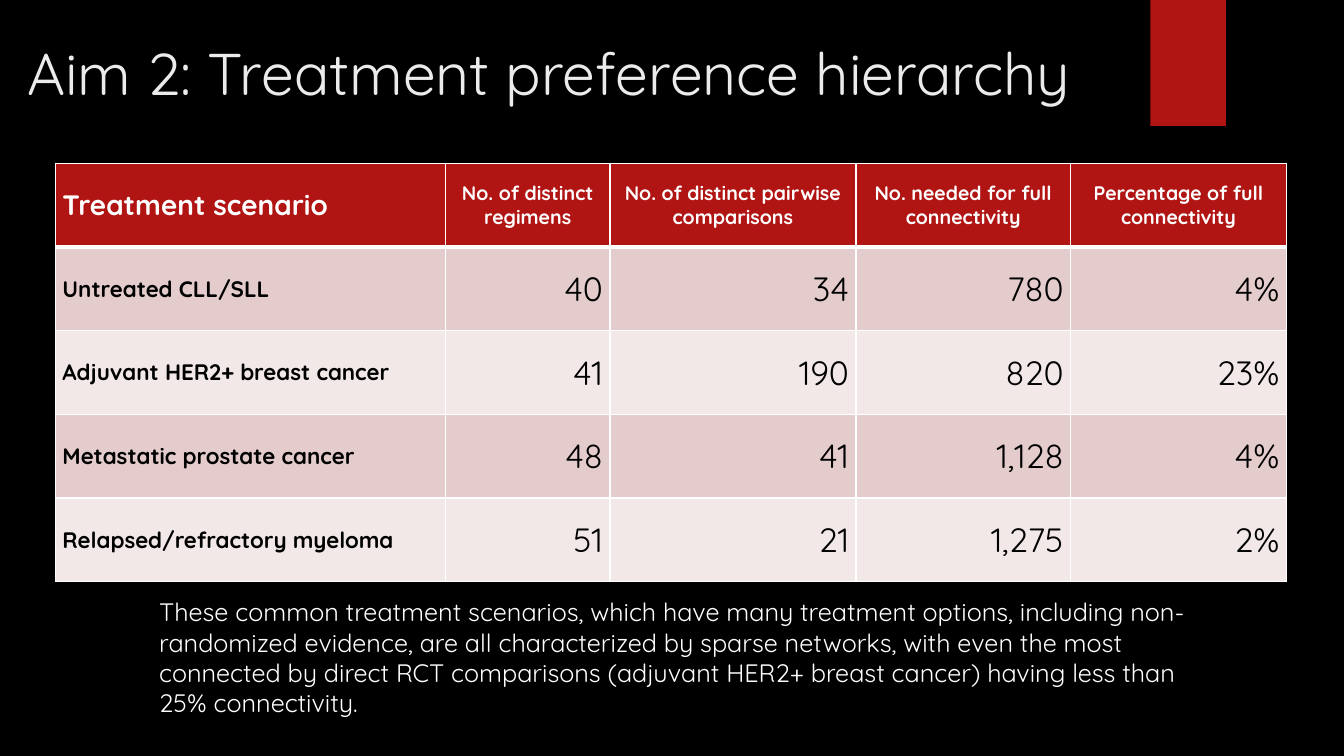
from pptx import Presentation
from pptx.dml.color import RGBColor
from pptx.enum.shapes import MSO_SHAPE
from pptx.enum.text import MSO_ANCHOR as ANCHOR, PP_ALIGN as ALIGN
from pptx.oxml import parse_xml
from pptx.oxml.ns import nsdecls
from pptx.util import Inches, Pt

FONT = "Quicksand"
RED, WHITE, BLACK = "B01513", "FFFFFF", "000000"
BANDS = ["E4CCCC", "F2E8E7"]

COLUMNS = [3.87, 1.63, 2.44, 2.13, 2.14]
ROW_HEIGHT = 0.83
ROWS = [
    ["Treatment scenario", "No. of distinct regimens", "No. of distinct pairwise comparisons",
     "No. needed for full connectivity", "Percentage of full connectivity"],
    ["Untreated CLL/SLL", "40", "34", "780", "4%"],
    ["Adjuvant HER2+ breast cancer", "41", "190", "820", "23%"],
    ["Metastatic prostate cancer", "48", "41", "1,128", "4%"],
    ["Relapsed/refractory myeloma", "51", "21", "1,275", "2%"],
]
TITLE = "Aim 2: Treatment preference hierarchy"
NOTE = ("These common treatment scenarios, which have many treatment options, including "
        "non-randomized evidence, are all characterized by sparse networks, with even the most "
        "connected by direct RCT comparisons (adjuvant HER2+ breast cancer) having less than "
        "25% connectivity.")


def paint(fill, color):
    fill.solid()
    fill.fore_color.rgb = RGBColor.from_string(color)


def add_run(p, text, size, color, bold=False):
    r = p.add_run()
    r.text = text
    r.font.name, r.font.size, r.font.bold = FONT, Pt(size), bold
    r.font.color.rgb = RGBColor.from_string(color)


def add_text(s, box, text, size, color):
    sp = s.shapes.add_textbox(*map(Inches, box))
    tf = sp.text_frame
    tf.word_wrap = True
    add_run(tf.paragraphs[0], text, size, color)


def add_ribbon(s, box):
    sp = s.shapes.add_shape(MSO_SHAPE.RECTANGLE, *map(Inches, box))
    sp.shadow.inherit = False
    paint(sp.fill, RED)
    sp.line.fill.background()


def set_borders(cell, top, bottom):
    """Draw white cell borders; top and bottom are widths in points."""
    tc_pr = cell._tc.get_or_add_tcPr()
    widths = {"lnL": 1, "lnR": 1, "lnT": top, "lnB": bottom}
    for i, (side, width) in enumerate(widths.items()):
        tc_pr.insert(i, parse_xml(
            f'<a:{side} {nsdecls("a")} w="{Pt(width)}"><a:solidFill>'
            f'<a:srgbClr val="{WHITE}"/></a:solidFill></a:{side}>'))


def cell_style(row, col):
    """Return alignment, size, colour and boldness for a cell."""
    if row == 0:
        return (ALIGN.CENTER, 14, WHITE, True) if col else (ALIGN.LEFT, 20, WHITE, True)
    return (ALIGN.RIGHT, 24, BLACK, False) if col else (ALIGN.LEFT, 16, BLACK, True)


def add_scenarios(s, left, top):
    size = sum(COLUMNS), ROW_HEIGHT * len(ROWS)
    table = s.shapes.add_table(len(ROWS), len(COLUMNS),
                               *map(Inches, (left, top, *size))).table
    for column, width in zip(table.columns, COLUMNS):
        column.width = Inches(width)
    for i, values in enumerate(ROWS):
        table.rows[i].height = Inches(ROW_HEIGHT)
        for j, text in enumerate(values):
            cell = table.cell(i, j)
            cell.vertical_anchor = ANCHOR.MIDDLE
            cell.margin_left = cell.margin_right = Inches(0.07)
            cell.margin_top = cell.margin_bottom = 0
            paint(cell.fill, BANDS[(i - 1) % 2] if i else RED)
            set_borders(cell, 3 if i == 1 else 1, 1 if i else 3)
            p = cell.text_frame.paragraphs[0]
            p.alignment, *style = cell_style(i, j)
            add_run(p, text, *style)


def main():
    prs = Presentation()
    prs.slide_width, prs.slide_height = Inches(13.33), Inches(7.5)
    s = prs.slides.add_slide(prs.slide_layouts[6])
    paint(s.background.fill, BLACK)
    add_ribbon(s, (11.41, 0, 0.75, 1.25))
    add_text(s, (0.17, 0.32, 11.4, 1.53), TITLE, 42, "EBEBEB")
    add_scenarios(s, 0.55, 1.62)
    add_text(s, (1.48, 5.87, 10.79, 1.31), NOTE, 18, WHITE)
    prs.save("out.pptx")


if __name__ == "__main__":
    main()
